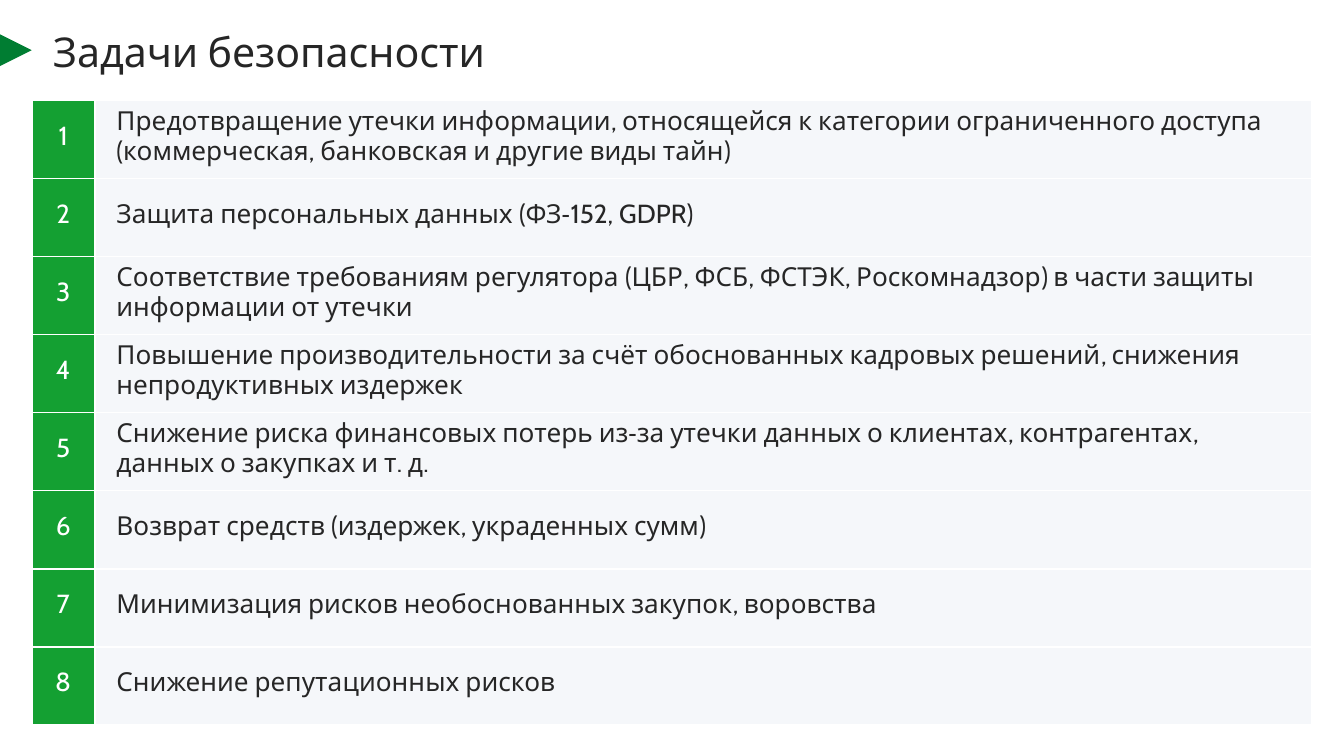
from dataclasses import dataclass

from lxml.etree import SubElement
from pptx import Presentation
from pptx.dml.color import RGBColor
from pptx.enum.shapes import MSO_SHAPE as Shape
from pptx.enum.text import MSO_ANCHOR as Anchor, PP_ALIGN as Align
from pptx.oxml.ns import qn
from pptx.util import Cm, Pt


@dataclass(frozen=True)
class Theme:
    font: str = "Cabin"
    marker: str = "007D32"
    number_fill: str = "14A032"
    row_fill: str = "F5F7FA"
    text: str = "262626"
    white: str = "FFFFFF"
    title_size: int = 22
    title_line: int = 24
    body_size: int = 14
    body_line: int = 16
    space_before: int = 6
    border: int = 1


THEME = Theme()
TITLE = "Задачи безопасности"
TASKS = [
    "Предотвращение утечки информации, относящейся к категории ограниченного доступа "
    "(коммерческая, банковская и другие виды тайн)",
    "Защита персональных данных (ФЗ‑152, GDPR)",
    "Соответствие требованиям регулятора (ЦБР, ФСБ, ФСТЭК, Роскомнадзор) "
    "в части защиты информации от утечки",
    "Повышение производительности за счёт обоснованных кадровых решений, "
    "снижения непродуктивных издержек",
    "Снижение риска финансовых потерь из‑за утечки данных о клиентах, контрагентах, "
    "данных о закупках и т. д.",
    "Возврат средств (издержек, украденных сумм)",
    "Минимизация рисков необоснованных закупок, воровства",
    "Снижение репутационных рисков",
]


def rgb(value):
    return RGBColor.from_string(value)


def format_paragraph(paragraph, size, line, color, align):
    paragraph.alignment = align
    paragraph.line_spacing = Pt(line)
    for run in paragraph.runs:
        run.font.name = THEME.font
        run.font.size = Pt(size)
        run.font.color.rgb = rgb(color)


def add_marker(slide, left, top, size):
    marker = slide.shapes.add_shape(Shape.ISOSCELES_TRIANGLE, left, top, size, size)
    marker.rotation = 90
    marker.shadow.inherit = False
    marker.fill.solid()
    marker.fill.fore_color.rgb = rgb(THEME.marker)
    marker.line.fill.background()


def set_title(slide, left, top, width, height):
    title = slide.shapes.title
    title.left, title.top, title.width, title.height = left, top, width, height
    frame = title.text_frame
    frame.text = TITLE
    frame.margin_left = frame.margin_right = frame.margin_top = frame.margin_bottom = 0
    frame.vertical_anchor = Anchor.MIDDLE
    format_paragraph(frame.paragraphs[0], THEME.title_size, THEME.title_line,
                     THEME.text, Align.LEFT)


def add_borders(cell):
    properties = cell._tc.get_or_add_tcPr()
    for position, side in enumerate(("a:lnL", "a:lnR", "a:lnT", "a:lnB")):
        line = SubElement(properties, qn(side), w=str(Pt(THEME.border)))
        properties.insert(position, line)  # borders must precede the fill
        fill = SubElement(line, qn("a:solidFill"))
        SubElement(fill, qn("a:srgbClr"), val=THEME.white)


def fill_cell(cell, text, fill, color, align, side_margin):
    cell.text_frame.text = text
    cell.vertical_anchor = Anchor.MIDDLE
    cell.margin_left = cell.margin_right = side_margin
    cell.margin_top, cell.margin_bottom = 0, Cm(0.1)
    cell.fill.solid()
    cell.fill.fore_color.rgb = rgb(fill)
    paragraph = cell.text_frame.paragraphs[0]
    format_paragraph(paragraph, THEME.body_size, THEME.body_line, color, align)
    paragraph.space_before = Pt(THEME.space_before)
    add_borders(cell)


def add_task_table(slide, left, top, width, height):
    table = slide.shapes.add_table(len(TASKS), 2, left, top, width, height).table
    table.first_row = table.horz_banding = False
    number_width = Cm(1.19)
    table.columns[0].width = number_width
    table.columns[1].width = width - number_width
    for index, task in enumerate(TASKS):
        fill_cell(table.cell(index, 0), str(index + 1), THEME.number_fill,
                  THEME.white, Align.CENTER, 0)
        fill_cell(table.cell(index, 1), task, THEME.row_fill,
                  THEME.text, Align.LEFT, Cm(0.41))


def build_task_slide(presentation):
    slide = presentation.slides.add_slide(presentation.slide_layouts.get_by_name("Title Only"))
    add_marker(slide, Cm(0), Cm(0.65), Cm(0.6))
    set_title(slide, Cm(1), Cm(0.5), Cm(18.6), Cm(1))
    add_task_table(slide, Cm(0.6), Cm(1.9), Cm(24.2), Cm(11.8))


def main():
    presentation = Presentation()
    presentation.slide_width, presentation.slide_height = Cm(25.4), Cm(14.29)
    build_task_slide(presentation)
    presentation.save("out.pptx")


if __name__ == "__main__":
    main()
